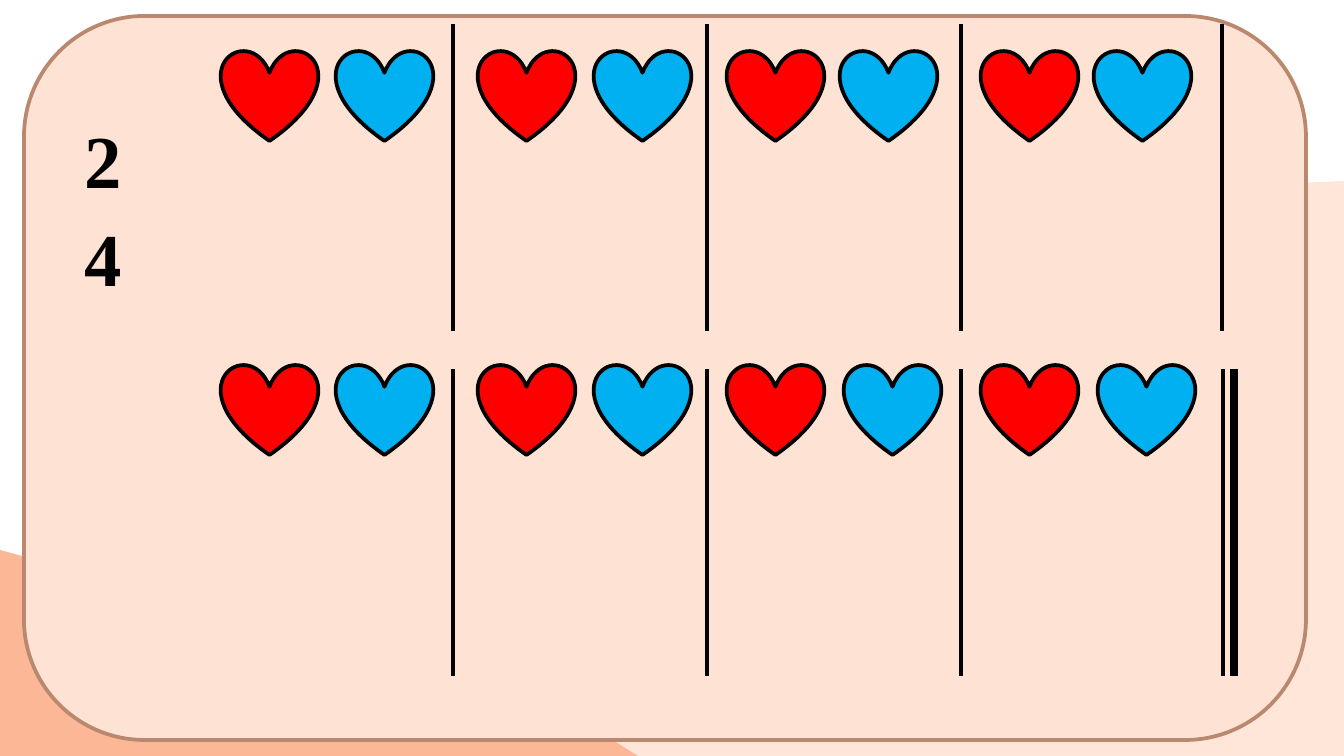
from lxml import etree
from pptx import Presentation
from pptx import util as u
from pptx.dml.color import RGBColor
from pptx.enum import shapes, text
from pptx.oxml.ns import qn

EMU_PER_PX = 914400 / 134.4
COLORS = {
    "blush": "FFE6D9",
    "peach": "FCB896",
    "card": "FEE3D5",
    "card_edge": "BA886F",
    "red": "FF0000",
    "blue": "00B0F0",
    "black": "000000",
}


def px(n):
    return u.Emu(round(n * EMU_PER_PX))


def rgb(name):
    return RGBColor.from_string(COLORS[name])


class RhythmSlide:
    font = "Times New Roman"
    font_size = 40
    outline = 2

    def __init__(self, prs):
        self.s = prs.slides.add_slide(prs.slide_layouts[6])

    def paint(self, sp, fill, line=None):
        sp.shadow.inherit = False
        sp.fill.solid()
        sp.fill.fore_color.rgb = rgb(fill)
        if line:
            sp.line.color.rgb = rgb(line)
            sp.line.width = u.Pt(self.outline)
        else:
            sp.line.fill.background()

    def polygon(self, points, fill):
        start, *rest = points
        fb = self.s.shapes.build_freeform(*start, scale=EMU_PER_PX)
        fb.add_line_segments(rest, close=True)
        self.paint(fb.convert_to_shape(), fill)

    def shape(self, kind, x, y, w, h, fill, line):
        sp = self.s.shapes.add_shape(kind, px(x), px(y), px(w), px(h))
        self.paint(sp, fill, line)

    def heart(self, x, y, fill):
        self.shape(shapes.MSO_SHAPE.HEART, x, y, 97, 91, fill, "black")

    def bar_line(self, x, top, bottom, weight=2.25):
        c = self.s.shapes.add_connector(
            shapes.MSO_CONNECTOR.STRAIGHT, px(x), px(top), px(x), px(bottom))
        c.line.color.rgb = rgb("black")
        c.line.width = u.Pt(weight)
        etree.SubElement(c._element.spPr, qn("a:effectLst"))

    def time_signature(self, x, y, w, h, beats):
        tf = self.s.shapes.add_textbox(px(x), px(y), px(w), px(h)).text_frame
        tf.word_wrap = True
        tf.auto_size = text.MSO_AUTO_SIZE.SHAPE_TO_FIT_TEXT
        tf.text = beats
        for p in tf.paragraphs:
            p.line_spacing = 1.1
            for r in p.runs:
                r.font.name = self.font
                r.font.size = u.Pt(self.font_size)
                r.font.bold = True
                r.font.color.rgb = rgb("black")


def main():
    prs = Presentation()
    prs.slide_width, prs.slide_height = px(1344), px(756)
    slide = RhythmSlide(prs)

    slide.polygon([(1344, 181), (542, 216), (306, 756), (1344, 756)], "blush")
    slide.polygon([(638, 756), (496, 667), (288, 626), (152, 629),
                   (73, 570), (0, 550), (0, 756)], "peach")
    slide.shape(shapes.MSO_SHAPE.ROUNDED_RECTANGLE, 24, 16, 1282, 724,
                "card", "card_edge")

    red_xs = [221, 478, 727, 981]
    heart_rows = [(50, [336, 594, 840, 1094]), (364, [336, 594, 844, 1098])]
    for y, blue_xs in heart_rows:
        for red_x, blue_x in zip(red_xs, blue_xs):
            slide.heart(red_x, y, "red")
            slide.heart(blue_x, y, "blue")

    slide.time_signature(71, 98, 77, 195, "2\n4")

    for top, last_x in [(24, 1222), (369, 1223)]:
        for x in [453, 707, 961, last_x]:
            slide.bar_line(x, top, top + 307)
    slide.bar_line(1234, 369, 676, weight=4.5)

    prs.save("out.pptx")


if __name__ == "__main__":
    main()
